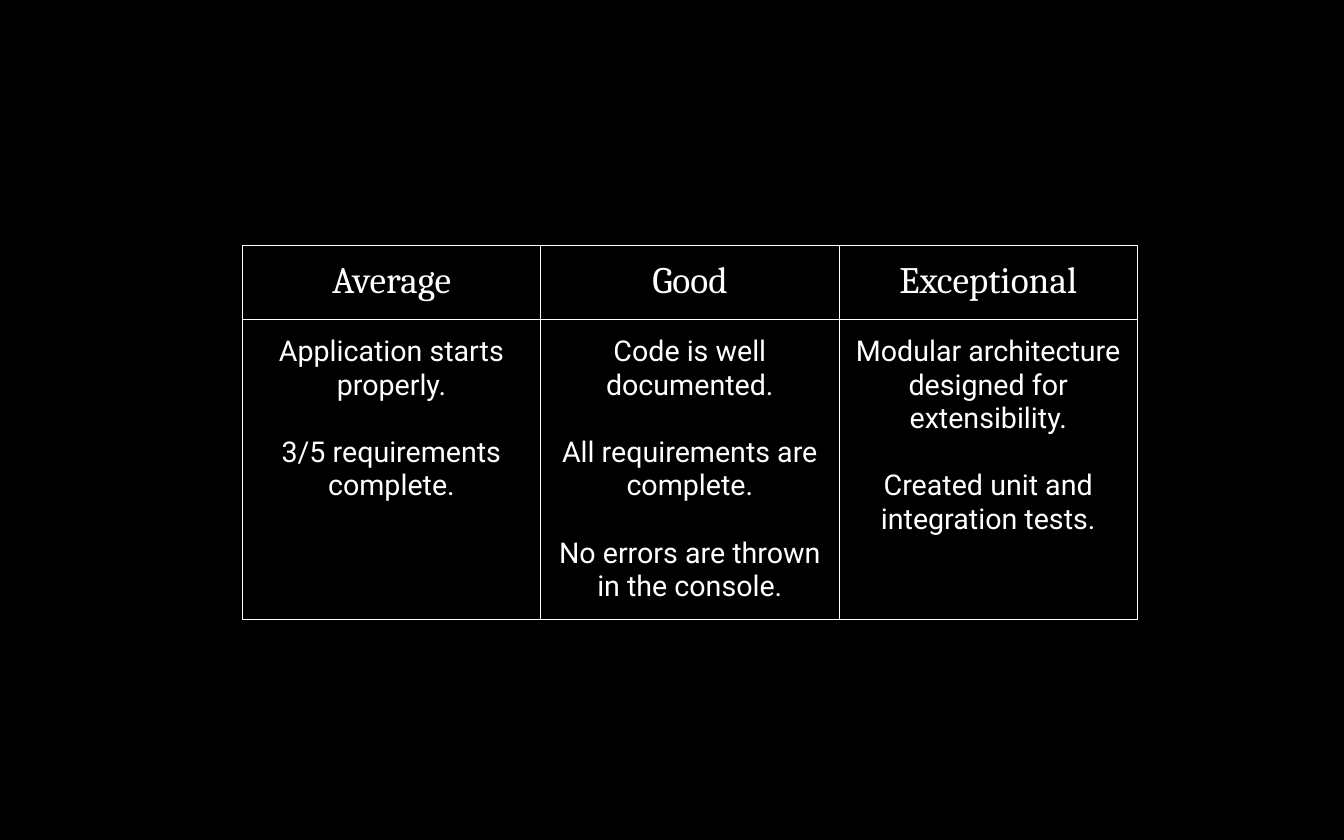
from lxml.etree import SubElement
from pptx import Presentation
from pptx.dml.color import RGBColor
from pptx.enum.text import PP_ALIGN as Align
from pptx.oxml.ns import qn
from pptx.util import Cm, Pt

WHITE = "FFFFFF"
BLACK = "000000"
COLUMN_WIDTH = Cm(8.46)
ROW_HEIGHTS = (Cm(2.11), Cm(8.48))
CRITERIA = {
    "Average": ["Application starts properly.", "3/5 requirements complete."],
    "Good": [
        "Code is well documented.",
        "All requirements are complete.",
        "No errors are thrown in the console.",
    ],
    "Exceptional": [
        "Modular architecture designed for extensibility.",
        "Created unit and integration tests.",
    ],
}


def color(value):
    """Return the colour for a hex string."""
    return RGBColor.from_string(value)


def set_borders(cell, value, width):
    """Draw a solid line on all four sides of a cell."""
    properties = cell._tc.get_or_add_tcPr()
    for side in ("lnL", "lnR", "lnT", "lnB"):
        line = SubElement(properties, qn(f"a:{side}"), w=str(width))
        fill = SubElement(line, qn("a:solidFill"))
        SubElement(fill, qn("a:srgbClr"), val=value)


def fill_cell(cell, lines, font_name, size):
    """Format a cell and write its centred paragraphs one line apart."""
    set_borders(cell, WHITE, Pt(0.75))
    cell.fill.background()
    cell.margin_left = cell.margin_right = Cm(0.38)
    cell.margin_top = cell.margin_bottom = Cm(0.43)
    frame = cell.text_frame
    for index, text in enumerate(lines):
        para = frame.add_paragraph() if index else frame.paragraphs[0]
        para.text = text
        para.alignment = Align.CENTER
        para.space_before = Pt(27 if index else 0)
        para.font.name = font_name
        para.font.size = Pt(size)
        para.font.color.rgb = color(WHITE)


def add_criteria_table(page):
    """Add the table with one column for each grade."""
    frame = page.shapes.add_table(
        len(ROW_HEIGHTS), len(CRITERIA), Cm(6.87), Cm(6.95),
        COLUMN_WIDTH * len(CRITERIA), sum(ROW_HEIGHTS),
    )
    table = frame.table
    table.first_row = table.horz_banding = False
    for row, height in zip(table.rows, ROW_HEIGHTS):
        row.height = height
    for index, (grade, criteria) in enumerate(CRITERIA.items()):
        table.columns[index].width = COLUMN_WIDTH
        fill_cell(table.cell(0, index), [grade], "Cambria", 30)
        fill_cell(table.cell(1, index), criteria, "Roboto", 23)


def main():
    """Build the slide and save the deck."""
    deck = Presentation()
    deck.slide_width, deck.slide_height = Cm(38.1), Cm(23.81)
    page = deck.slides.add_slide(deck.slide_layouts[6])
    page.background.fill.solid()
    page.background.fill.fore_color.rgb = color(BLACK)
    add_criteria_table(page)
    deck.save("out.pptx")


if __name__ == "__main__":
    main()
